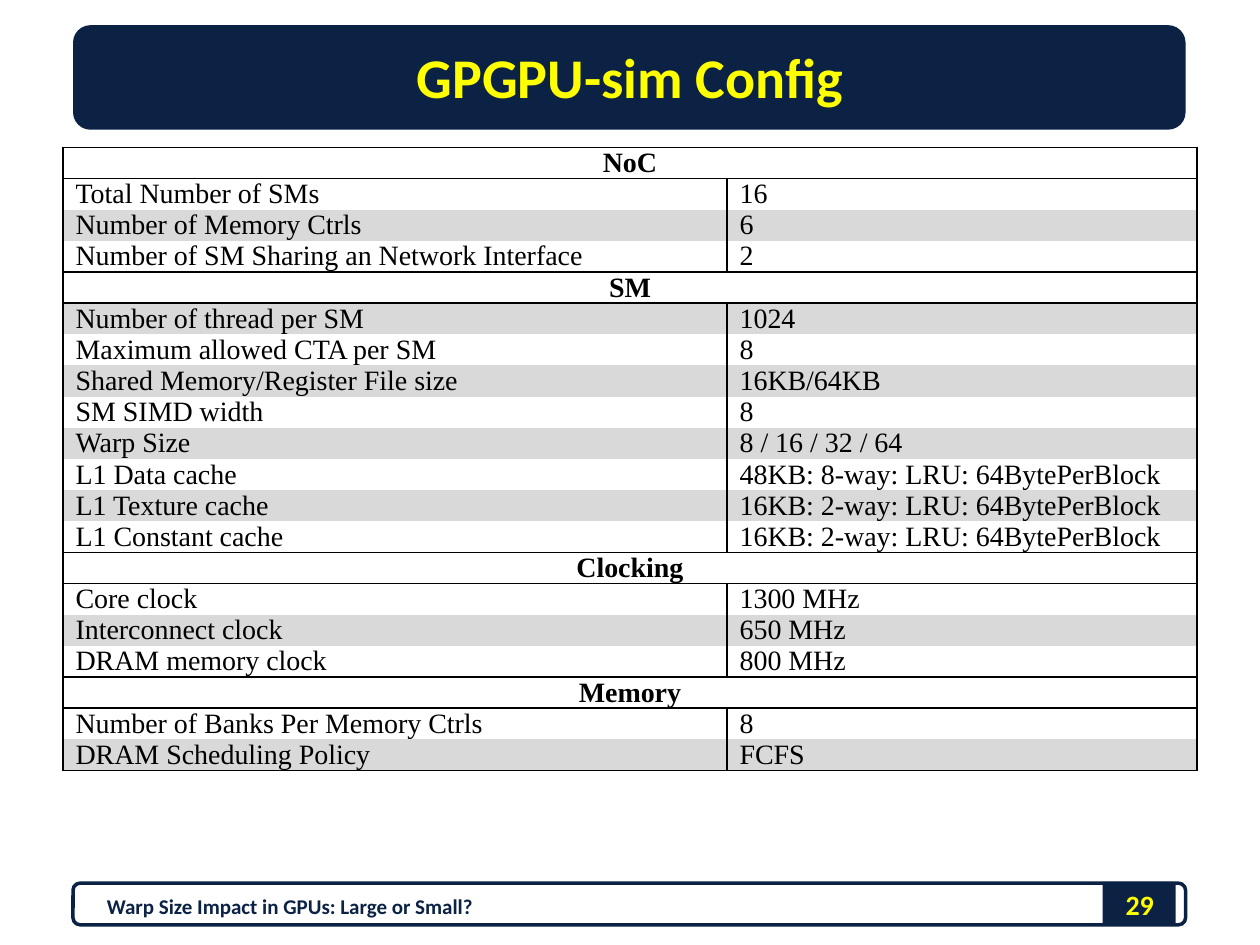
import pptx
import pptx.util
import pptx.dml.color
import pptx.enum.shapes
import pptx.enum.text
import pptx.oxml.ns
import lxml.etree
import dataclasses

Inches = pptx.util.Inches
Pt = pptx.util.Pt
RGB = pptx.dml.color.RGBColor
Align = pptx.enum.text.PP_ALIGN
Anchor = pptx.enum.text.MSO_ANCHOR
Preset = pptx.enum.shapes.MSO_SHAPE


@dataclasses.dataclass(frozen=True)
class Theme:
    navy: RGB = RGB.from_string("0B2245")
    yellow: RGB = RGB.from_string("FFFF00")
    black: RGB = RGB.from_string("000000")
    white: RGB = RGB.from_string("FFFFFF")
    band: RGB = RGB.from_string("D9D9D9")
    heading_font: str = "Calibri"
    table_font: str = "Times New Roman"
    title_size: int = 32
    table_size: int = 16
    number_size: int = 16
    footer_size: int = 12


theme = Theme()


def write_text(frame, text, alignment, color, **font_values):
    paragraph = frame.paragraphs[0]
    paragraph.text = text
    paragraph.alignment = alignment
    font = paragraph.runs[0].font
    font.color.rgb = color
    for attribute, value in font_values.items():
        setattr(font, attribute, value)


def draw_borders(cell, visible_sides):
    properties = cell._tc.get_or_add_tcPr()
    for position, side in enumerate(("L", "R", "T", "B")):
        line = lxml.etree.Element(pptx.oxml.ns.qn("a:ln" + side), w=str(Pt(1)))
        if side in visible_sides:
            fill = lxml.etree.SubElement(line, pptx.oxml.ns.qn("a:solidFill"))
            lxml.etree.SubElement(fill, pptx.oxml.ns.qn("a:srgbClr"), val=str(theme.black))
        else:
            lxml.etree.SubElement(line, pptx.oxml.ns.qn("a:noFill"))
        properties.insert(position, line)


sections = {
    "NoC": [
        ("Total Number of SMs", "16"),
        ("Number of Memory Ctrls", "6"),
        ("Number of SM Sharing an Network Interface", "2"),
    ],
    "SM": [
        ("Number of thread per SM", "1024"),
        ("Maximum allowed CTA per SM", "8"),
        ("Shared Memory/Register File size", "16KB/64KB"),
        ("SM SIMD width", "8"),
        ("Warp Size", "8 / 16 / 32 / 64"),
        ("L1 Data cache", "48KB: 8-way: LRU: 64BytePerBlock"),
        ("L1 Texture cache", "16KB: 2-way: LRU: 64BytePerBlock"),
        ("L1 Constant cache", "16KB: 2-way: LRU: 64BytePerBlock"),
    ],
    "Clocking": [
        ("Core clock", "1300 MHz"),
        ("Interconnect clock", "650 MHz"),
        ("DRAM memory clock", "800 MHz"),
    ],
    "Memory": [
        ("Number of Banks Per Memory Ctrls", "8"),
        ("DRAM Scheduling Policy", "FCFS"),
    ],
}

presentation = pptx.Presentation()
presentation.slide_width = Inches(10)
presentation.slide_height = Inches(7.5)
slide = presentation.slides.add_slide(presentation.slide_layouts[5])

for preset, left, top, width, height, filled in (
    (Preset.RECTANGLE, 8.75, 7, 0.58, 0.33, True),
    (Preset.ROUNDED_RECTANGLE, 0.58, 7.01, 8.83, 0.33, False),
    (Preset.ROUNDED_RECTANGLE, 0.58, 0.2, 8.83, 0.83, True),
):
    panel = slide.shapes.add_shape(
        preset, Inches(left), Inches(top), Inches(width), Inches(height)
    )
    panel.shadow.inherit = False
    if filled:
        panel.fill.solid()
        panel.fill.fore_color.rgb = theme.navy
        panel.line.fill.background()
    else:
        panel.fill.background()
        panel.line.color.rgb = theme.navy
        panel.line.width = Pt(2)

title = slide.shapes.title
title.element.getparent().append(title.element)
title_place = {"left": 0.5, "top": 0.17, "width": 9, "height": 0.87}
for attribute, value in title_place.items():
    setattr(title, attribute, Inches(value))
title.text_frame.vertical_anchor = Anchor.MIDDLE
write_text(
    title.text_frame, "GPGPU-sim Config", Align.CENTER, theme.yellow,
    name=theme.heading_font, size=Pt(theme.title_size), bold=True,
)

row_count = sum(1 + len(settings) for settings in sections.values())
config = slide.shapes.add_table(
    row_count, 2, Inches(0.5), Inches(1.17), Inches(9), Inches(4.95)
).table
for attribute in ("first_row", "horz_banding"):
    setattr(config, attribute, False)
for column, width in zip(config.columns, (5.27, 3.73)):
    column.width = Inches(width)

cell_format = {
    "margin_left": Inches(0.1),
    "margin_right": Inches(0.1),
    "margin_top": 0,
    "margin_bottom": 0,
    "vertical_anchor": Anchor.MIDDLE,
}
row = 0
for section, settings in sections.items():
    config.cell(row, 0).merge(config.cell(row, 1))
    for offset, texts in enumerate([(section, ""), *settings]):
        is_heading = offset == 0
        sides = "LR" + "T" * (offset <= 1) + "B" * (offset in (0, len(settings)))
        banded = not is_heading and row % 2 == (0 if section in ("NoC", "Clocking") else 1)
        if section == "Clocking":
            banded = offset == 2
        for column, text in enumerate(texts):
            cell = config.cell(row, column)
            for attribute, value in cell_format.items():
                setattr(cell, attribute, value)
            cell.fill.solid()
            cell.fill.fore_color.rgb = theme.band if banded else theme.white
            draw_borders(cell, sides)
            if text:
                write_text(
                    cell.text_frame, text,
                    Align.CENTER if is_heading else Align.JUSTIFY, theme.black,
                    name=theme.table_font, size=Pt(theme.table_size), bold=is_heading,
                )
                cell.text_frame.paragraphs[0].space_after = Pt(4)
        row += 1

for text, left, top, width, alignment, color, size in (
    ("29", 8.67, 6.98, 0.75, Align.CENTER, theme.yellow, theme.number_size),
    ("Warp Size Impact in GPUs: Large or Small?", 0.75, 6.99, 5.58,
     Align.LEFT, theme.navy, theme.footer_size),
):
    footer = slide.shapes.add_textbox(
        Inches(left), Inches(top), Inches(width), Inches(0.4)
    ).text_frame
    footer.word_wrap = True
    footer.vertical_anchor = Anchor.MIDDLE
    write_text(
        footer, text, alignment, color,
        name=theme.heading_font, size=Pt(size), bold=True,
    )

presentation.save("out.pptx")
